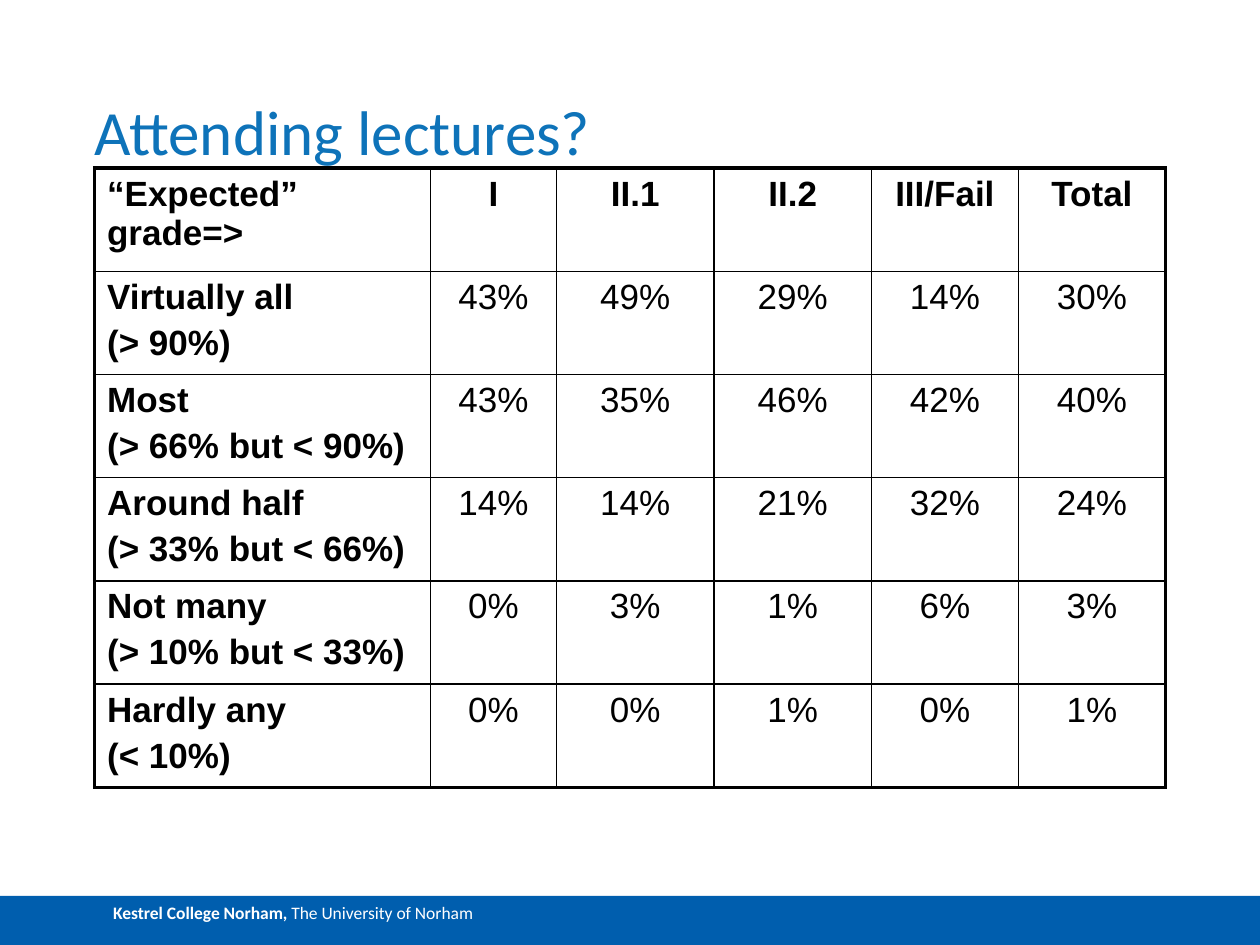
import pptx
import pptx.dml.color
import pptx.enum.shapes
import pptx.enum.text
import pptx.oxml
import pptx.oxml.ns
import pptx.util

Pt = pptx.util.Pt
ALIGN = pptx.enum.text.PP_ALIGN
ANCHOR = pptx.enum.text.MSO_ANCHOR

TITLE = "Attending lectures?"
FOOTER = [("Kestrel College Norham, ", True), ("The University of Norham", False)]
GRADES = ["“Expected” grade=>", "I", "II.1", "II.2", "III/Fail", "Total"]
ATTENDANCE = [
    ("Virtually all\n(> 90%)", "43%", "49%", "29%", "14%", "30%"),
    ("Most\n(> 66% but < 90%)", "43%", "35%", "46%", "42%", "40%"),
    ("Around half\n(> 33% but < 66%)", "14%", "14%", "21%", "32%", "24%"),
    ("Not many\n(> 10% but < 33%)", "0%", "3%", "1%", "6%", "3%"),
    ("Hardly any\n(< 10%)", "0%", "0%", "1%", "0%", "1%"),
]

THEME = {
    "title": {"name": "Calibri", "size": 36, "color": "0E73B9", "bold": False},
    "table": {"name": "Arial", "size": 20, "color": "000000"},
    "footer": {"name": "Calibri", "size": 10, "color": "FFFFFF"},
    "band": "005EAE",
    "inner_line": 1,
    "outer_line": 2.25,
}
PAGE_WIDTH, PAGE_HEIGHT = 720, 540
LEFT = 54
TITLE_TOP, TITLE_HEIGHT = 12, 84
TABLE_TOP = TITLE_TOP + TITLE_HEIGHT
COLUMN_WIDTHS = [192, 72, 90, 90, 84, 84]
ROW_HEIGHT = 59
BAND_HEIGHT = 28
FOOTER_INDENT = 57.6


def set_all(target, values):
    for name, value in values.items():
        setattr(target, name, value)


def add_span(para, text, role, **changes):
    span = para.add_run()
    span.text = text
    style = {**THEME[role], **changes}
    set_all(span.font, {"name": style["name"], "size": Pt(style["size"]), "bold": style["bold"]})
    span.font.color.rgb = pptx.dml.color.RGBColor.from_string(style["color"])


def set_borders(cell, widths):
    """Draw the sides in the order left, right, top, bottom."""
    properties = cell._tc.get_or_add_tcPr()
    for index, (side, width) in enumerate(zip("LRTB", widths)):
        line = pptx.oxml.parse_xml(
            f'<a:ln{side} {pptx.oxml.ns.nsdecls("a")} w="{int(Pt(width))}">'
            f'<a:solidFill><a:srgbClr val="{THEME["table"]["color"]}"/></a:solidFill></a:ln{side}>'
        )
        properties.insert(index, line)


def add_footer(page):
    band = page.shapes.add_shape(
        pptx.enum.shapes.MSO_SHAPE.RECTANGLE,
        0, Pt(PAGE_HEIGHT - BAND_HEIGHT), Pt(PAGE_WIDTH), Pt(BAND_HEIGHT),
    )
    band.shadow.inherit = False
    band.fill.solid()
    band.fill.fore_color.rgb = pptx.dml.color.RGBColor.from_string(THEME["band"])
    band.line.fill.background()
    band.text_frame.vertical_anchor = ANCHOR.TOP
    para = band.text_frame.paragraphs[0]
    para.alignment = ALIGN.LEFT
    para._p.get_or_add_pPr().set("marL", str(int(Pt(FOOTER_INDENT))))
    for text, bold in FOOTER:
        add_span(para, text, "footer", bold=bold)


def add_title(page):
    title = page.shapes.title
    set_all(title, {"left": Pt(LEFT), "top": Pt(TITLE_TOP),
                    "width": Pt(sum(COLUMN_WIDTHS)), "height": Pt(TITLE_HEIGHT)})
    set_all(title.text_frame, {
        "margin_left": 0, "margin_right": 0, "margin_top": 0, "margin_bottom": 0,
        "vertical_anchor": ANCHOR.BOTTOM, "word_wrap": True,
        "auto_size": pptx.enum.text.MSO_AUTO_SIZE.NONE,
    })
    para = title.text_frame.paragraphs[0]
    para.alignment = ALIGN.LEFT
    add_span(para, TITLE, "title")


def fill_cell(cell, text, is_header, is_label):
    cell.fill.background()
    set_all(cell, {"margin_left": Pt(7.2), "margin_right": Pt(7.2),
                   "margin_top": Pt(3.6), "margin_bottom": Pt(3.6),
                   "vertical_anchor": ANCHOR.TOP})
    for index, line in enumerate(text.split("\n")):
        frame = cell.text_frame
        para = frame.add_paragraph() if index else frame.paragraphs[0]
        set_all(para, {"alignment": ALIGN.LEFT if is_label else ALIGN.CENTER,
                       "space_before": Pt(4)})
        add_span(para, line, "table", bold=is_header or is_label)


def add_attendance_table(page):
    rows = [GRADES, *ATTENDANCE]
    last_row, last_column = len(rows) - 1, len(GRADES) - 1
    table = page.shapes.add_table(
        len(rows), len(GRADES), Pt(LEFT), Pt(TABLE_TOP),
        Pt(sum(COLUMN_WIDTHS)), Pt(ROW_HEIGHT * len(rows)),
    ).table
    set_all(table, {"first_row": False, "horz_banding": False})
    for column, width in zip(table.columns, COLUMN_WIDTHS):
        column.width = Pt(width)
    for r, texts in enumerate(rows):
        table.rows[r].height = Pt(ROW_HEIGHT)
        for c, text in enumerate(texts):
            cell = table.cell(r, c)
            fill_cell(cell, text, r == 0, c == 0)
            on_edge = (c == 0, c == last_column, r == 0, r == last_row)
            set_borders(cell, [THEME["outer_line" if edge else "inner_line"] for edge in on_edge])


def main():
    deck = pptx.Presentation()
    set_all(deck, {"slide_width": Pt(PAGE_WIDTH), "slide_height": Pt(PAGE_HEIGHT)})
    page = deck.slides.add_slide(deck.slide_layouts.get_by_name("Title Only"))
    add_footer(page)
    add_title(page)
    add_attendance_table(page)
    deck.save("out.pptx")


if __name__ == "__main__":
    main()
